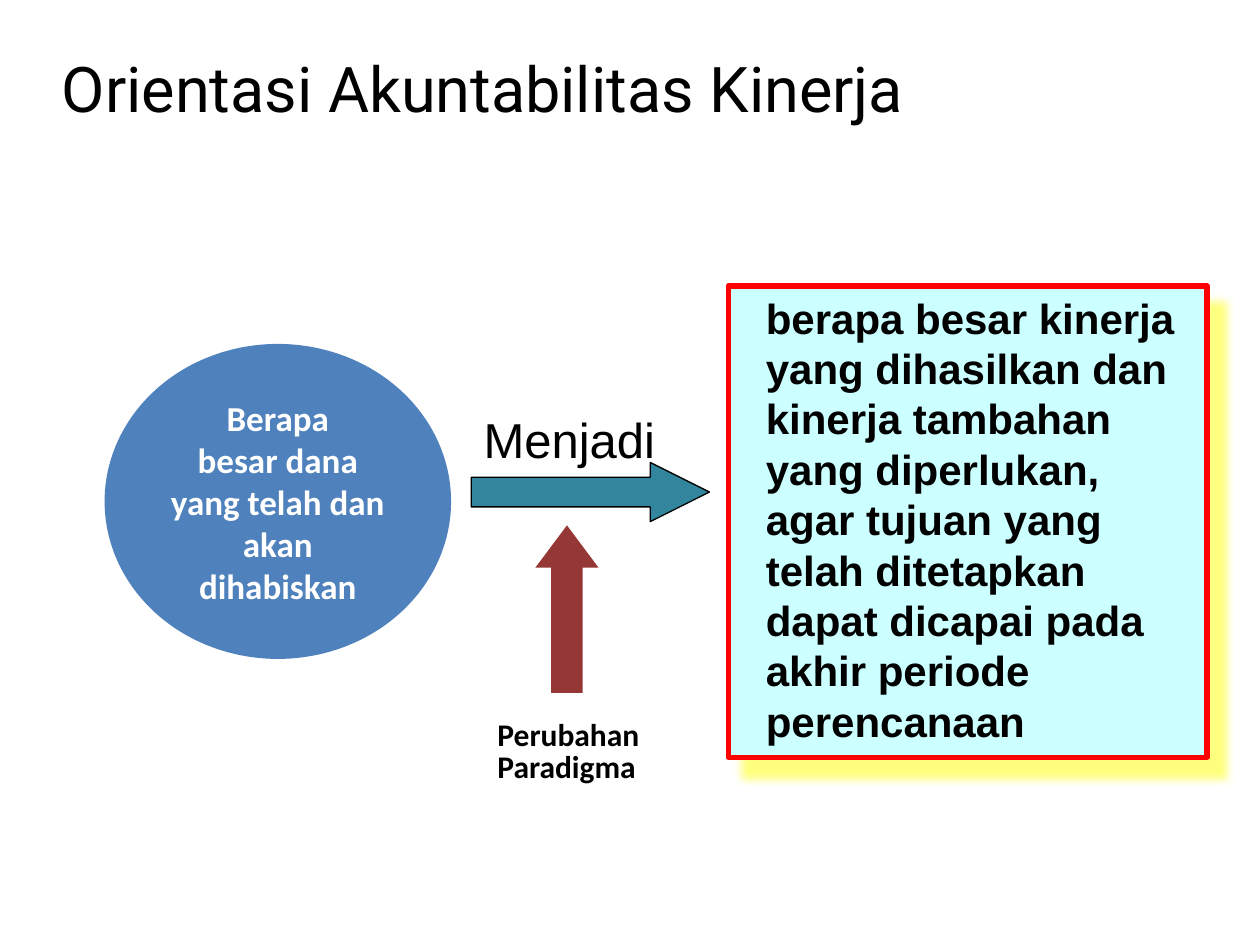
from lxml import etree
from pptx import Presentation
from pptx.dml.color import RGBColor
from pptx.enum.shapes import MSO_SHAPE as Shape
from pptx.enum.text import MSO_ANCHOR as Anchor, MSO_AUTO_SIZE as AutoSize, PP_ALIGN as Align
from pptx.oxml import parse_xml
from pptx.oxml.ns import nsdecls
from pptx.util import Inches, Pt


def write_text(shape, text, font, size, color="000000", bold=False, align=Align.LEFT,
               anchor=Anchor.TOP, wrap=True, auto_size=AutoSize.NONE, spacing=None):
    frame = shape.text_frame
    frame.text = text
    frame.word_wrap = wrap
    frame.auto_size = auto_size
    frame.vertical_anchor = anchor
    for paragraph in frame.paragraphs:
        paragraph.alignment = align
        paragraph.line_spacing = spacing
        paragraph.font.name = font
        paragraph.font.size = Pt(size)
        paragraph.font.bold = bold
        paragraph.font.color.rgb = RGBColor.from_string(color)


def add_figure(kind, left, top, width, height, fill, line=None, line_width=0.75):
    shape = slide.shapes.add_shape(kind, Inches(left), Inches(top), Inches(width), Inches(height))
    shape.shadow.inherit = False
    shape.fill.solid()
    shape.fill.fore_color.rgb = RGBColor.from_string(fill)
    if line:
        shape.line.color.rgb = RGBColor.from_string(line)
        shape.line.width = Pt(line_width)
    else:
        shape.line.fill.background()
    return shape


presentation = Presentation()
presentation.slide_width = Inches(10)
presentation.slide_height = Inches(7.5)
slide = presentation.slides.add_slide(presentation.slide_layouts[5])

# Title
title = slide.shapes.title
title.left, title.top = Inches(0.39), Inches(0.13)
title.width, title.height = Inches(8.61), Inches(1.12)
write_text(title, "Orientasi Akuntabilitas Kinerja", "Roboto", 36, anchor=Anchor.MIDDLE)

# New paradigm: red-framed box with a soft yellow shadow
result_box = add_figure(Shape.RECTANGLE, 5.78, 2.27, 3.8, 3.74, "CCFFFF", "FF0000", 3)
write_text(result_box, "berapa besar kinerja yang dihasilkan dan kinerja tambahan yang diperlukan, "
           "agar tujuan yang telah ditetapkan dapat dicapai pada akhir periode perencanaan",
           "Arial", 24, bold=True, auto_size=AutoSize.SHAPE_TO_FIT_TEXT)
paragraph_properties = result_box.text_frame.paragraphs[0]._p.get_or_add_pPr()
paragraph_properties.set("marL", str(Inches(0.2)))
paragraph_properties.set("indent", "0")
effects = result_box._element.spPr.find("{*}effectLst")
effects.append(parse_xml(
    f'<a:outerShdw {nsdecls("a")} blurRad="{Pt(5)}" dist="{Pt(13.5)}" dir="{48 * 60000}" '
    'algn="ctr" rotWithShape="0">'
    '<a:srgbClr val="FFFF00"><a:alpha val="50000"/></a:srgbClr></a:outerShdw>'))

# Arrow from the old to the new paradigm, with its label
label = slide.shapes.add_textbox(Inches(3.74), Inches(3.2), Inches(1.97), Inches(0.57))
write_text(label, "Menjadi", "Arial", 28, auto_size=AutoSize.SHAPE_TO_FIT_TEXT)
change_arrow = add_figure(Shape.DOWN_ARROW, 4.45, 2.96, 0.47, 1.89, "31859C", "000000")
change_arrow.rotation = 270
change_arrow.adjustments[1] = 1

# Old paradigm
spending = add_figure(Shape.OVAL, 0.83, 2.73, 2.75, 2.5, "4F81BD")
write_text(spending, "Berapa\nbesar dana yang telah dan akan dihabiskan", "Calibri", 20,
           color="FFFFFF", bold=True, align=Align.CENTER, anchor=Anchor.MIDDLE)

# Paradigm shift pointing up at the arrow
shift_arrow = add_figure(Shape.UP_ARROW, 4.25, 4.17, 0.5, 1.33, "953735")
shift_arrow.adjustments[1] = 0.67
caption = slide.shapes.add_textbox(Inches(3.85), Inches(5.67), Inches(1.33), Inches(0.62))
write_text(caption, "Perubahan\nParadigma", "Calibri", 18, bold=True, wrap=False,
           auto_size=AutoSize.SHAPE_TO_FIT_TEXT, spacing=0.85)

presentation.save("out.pptx")
